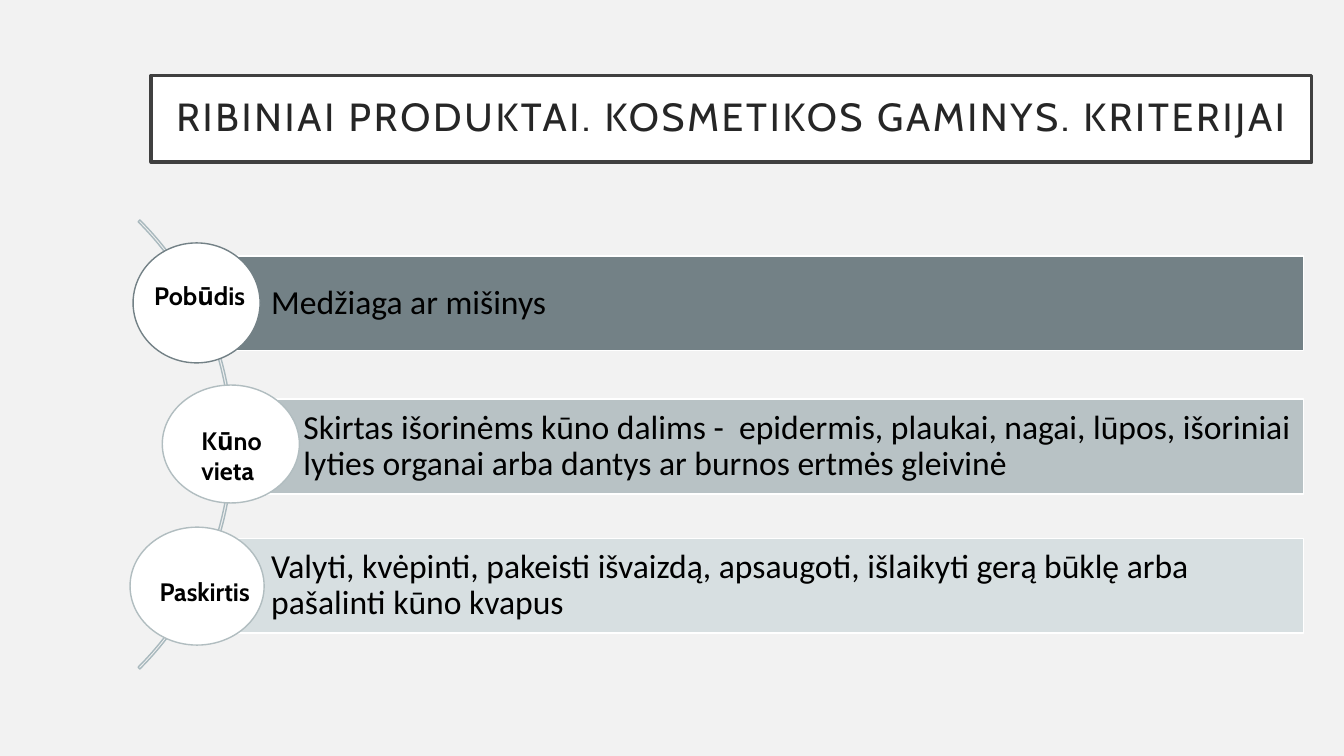
from pptx import Presentation
from pptx.dml.color import RGBColor
from pptx.enum.shapes import MSO_SHAPE
from pptx.enum.text import MSO_ANCHOR, PP_ALIGN
from pptx.util import Inches, Pt

RECTANGLE, OVAL, ARC = MSO_SHAPE.RECTANGLE, MSO_SHAPE.OVAL, MSO_SHAPE.BLOCK_ARC
LEFT, CENTER = PP_ALIGN.LEFT, PP_ALIGN.CENTER
TOP, MIDDLE = MSO_ANCHOR.TOP, MSO_ANCHOR.MIDDLE
COLORS = {
    "background": "F2F2F2", "white": "FFFFFF", "black": "000000",
    "frame": "404040", "title": "262626", "arc": "A9B9BE",
    "dark": "738186", "medium": "B8C2C5", "light": "D7DFE1", "ring": "B1BDC0",
}
CELL = Inches(0.1)
BAR_RIGHT, BAR_HEIGHT = 129.3, 9.4

presentation = Presentation()
presentation.slide_width = Inches(13.33)
presentation.slide_height = Inches(7.5)
slide = presentation.slides.add_slide(presentation.slide_layouts[6])
slide.background.fill.solid()
slide.background.fill.fore_color.rgb = RGBColor.from_string(COLORS["background"])


def add_figure(kind, box, fill, line, width=1):
    shape = slide.shapes.add_shape(kind, *[round(cells * CELL) for cells in box])
    shape.shadow.inherit = False
    if fill:
        shape.fill.solid()
        shape.fill.fore_color.rgb = RGBColor.from_string(COLORS[fill])
    else:
        shape.fill.background()
    shape.line.color.rgb = RGBColor.from_string(COLORS[line])
    shape.line.width = Pt(width)
    return shape


def write(shape, text, font, size, color, insets, anchor, align=LEFT, bold=False, spacing=0.9):
    frame = shape.text_frame
    frame.word_wrap = True
    frame.vertical_anchor = anchor
    frame.margin_left, frame.margin_top, frame.margin_right, frame.margin_bottom = [
        Inches(inset) for inset in insets]
    paragraph = frame.paragraphs[0]
    paragraph.text = text
    paragraph.alignment = align
    paragraph.line_spacing = spacing
    paragraph.font.name = font
    paragraph.font.size = Pt(size)
    paragraph.font.bold = bold
    paragraph.font.color.rgb = RGBColor.from_string(COLORS[color])
    return paragraph


title = add_figure(RECTANGLE, (15, 7.5, 115.1, 8.6), "white", "frame", 2.5)
heading = write(title, "RIBINIAI PRODUKTAI. KOSMETIKOS GAMINYS. KRITERIJAI",
                "Cabin", 28, "title", (0.2, 0.2, 0.2, 0.2), MIDDLE, CENTER)
heading.runs[0].font._element.set("spc", "200")

arc = add_figure(ARC, (-39.9, 12.6, 63, 63), None, "arc")
for index, value in enumerate((189, 27, 0.004)):
    arc.adjustments[index] = value

criteria = [
    ("Pobūdis", "Medžiaga ar mišinys", "dark", "dark", (19.5, 25.4),
     (13.2, 24.1, 12.6, 11.9), (14.3, 27.3, 12, 4), LEFT),
    ("Kūno vieta",
     "Skirtas išorinėms kūno dalims -  epidermis, plaukai, nagai, lūpos, išoriniai "
     "lyties organai arba dantys ar burnos ertmės gleivinė",
     "medium", "ring", (22.7, 39.6),
     (16.1, 38.2, 13.6, 11.7), (19, 41.7, 8.6, 7.1), LEFT),
    ("Paskirtis",
     "Valyti, kvėpinti, pakeisti išvaizdą, apsaugoti, išlaikyti gerą būklę arba "
     "pašalinti kūno kvapus",
     "light", "ring", (19.5, 53.4),
     (12.9, 52.3, 13.3, 11.7), (14.3, 56.7, 12, 4), CENTER),
]
for name, description, fill, ring, (left, top), circle_box, label_box, align in criteria:
    bar = add_figure(RECTANGLE, (left, top, BAR_RIGHT - left, BAR_HEIGHT), fill, "white")
    write(bar, description, "Calibri", 24, "black", (0.74, 0.07, 0.07, 0.07), MIDDLE)
    add_figure(OVAL, circle_box, "white", ring)
    label = slide.shapes.add_textbox(*[round(cells * CELL) for cells in label_box])
    write(label, name, "Cabin", 18, "black", (0.1, 0.05, 0.1, 0.05), TOP, align, True, 1.0)

presentation.save("out.pptx")
